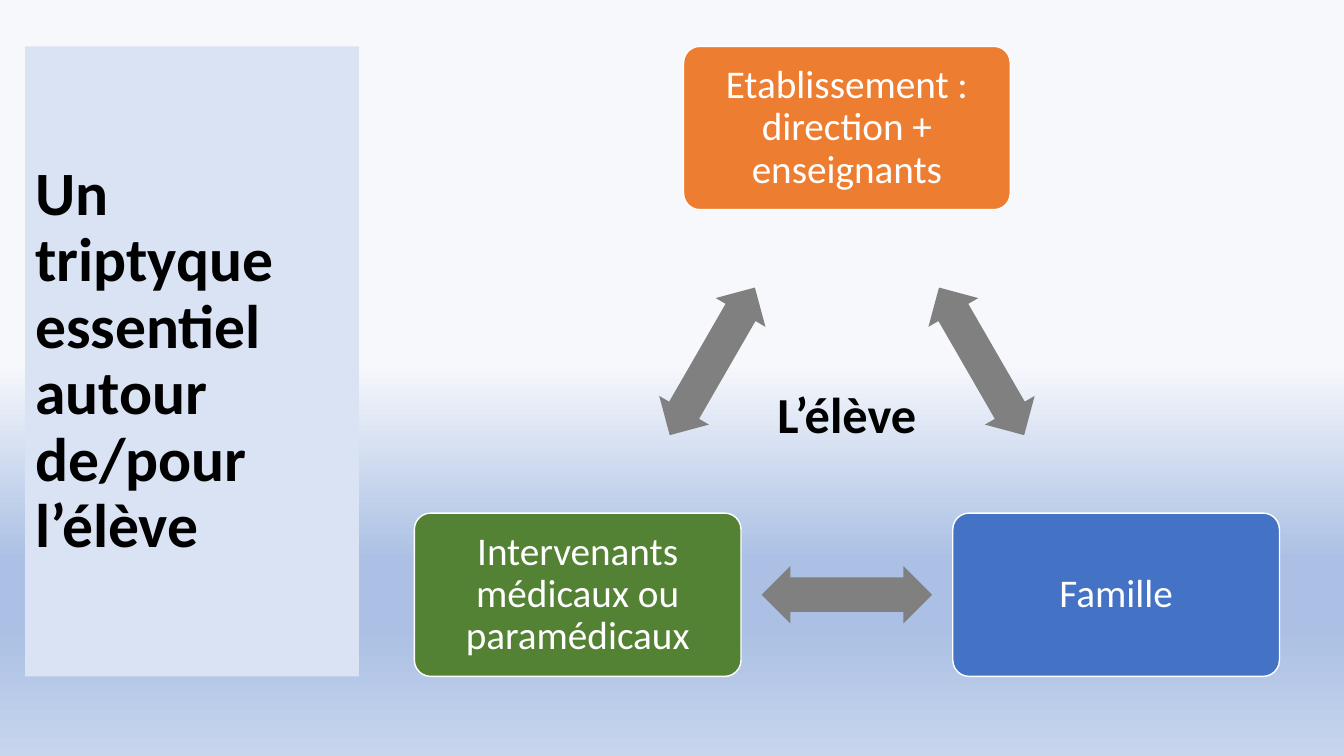
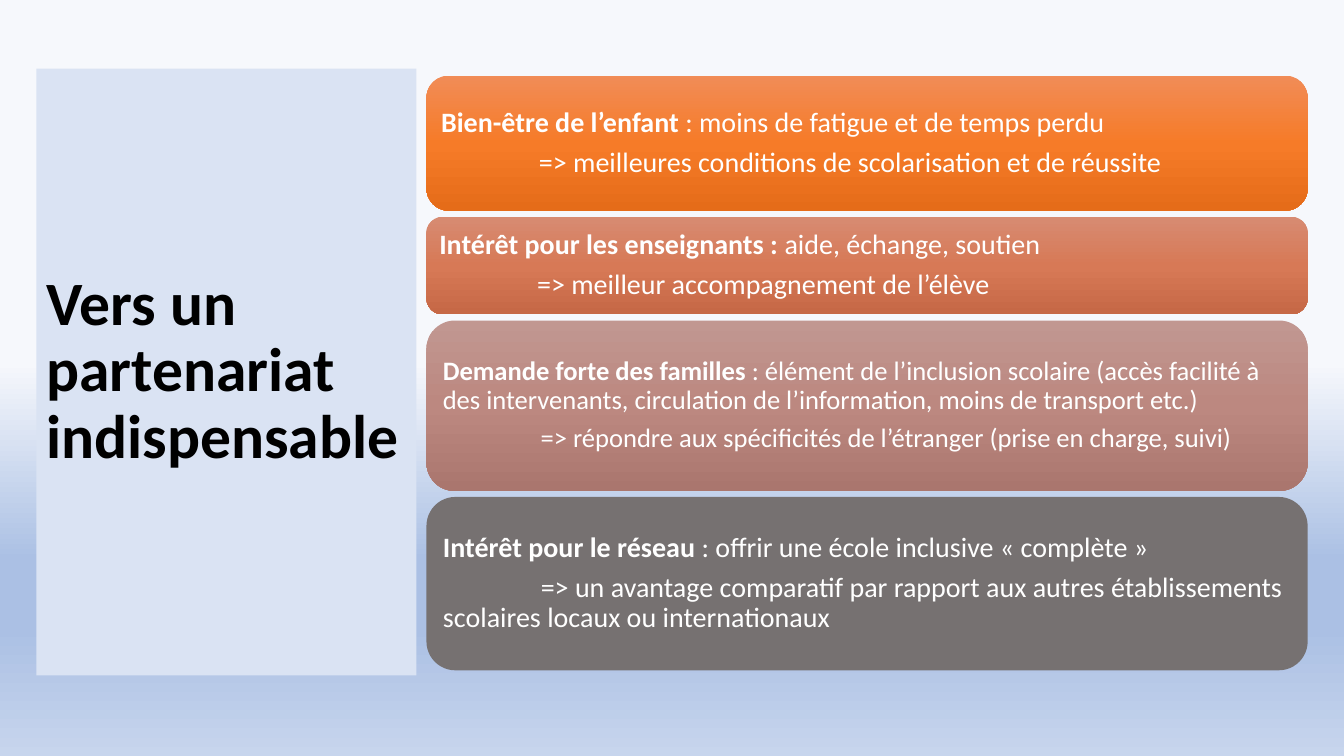
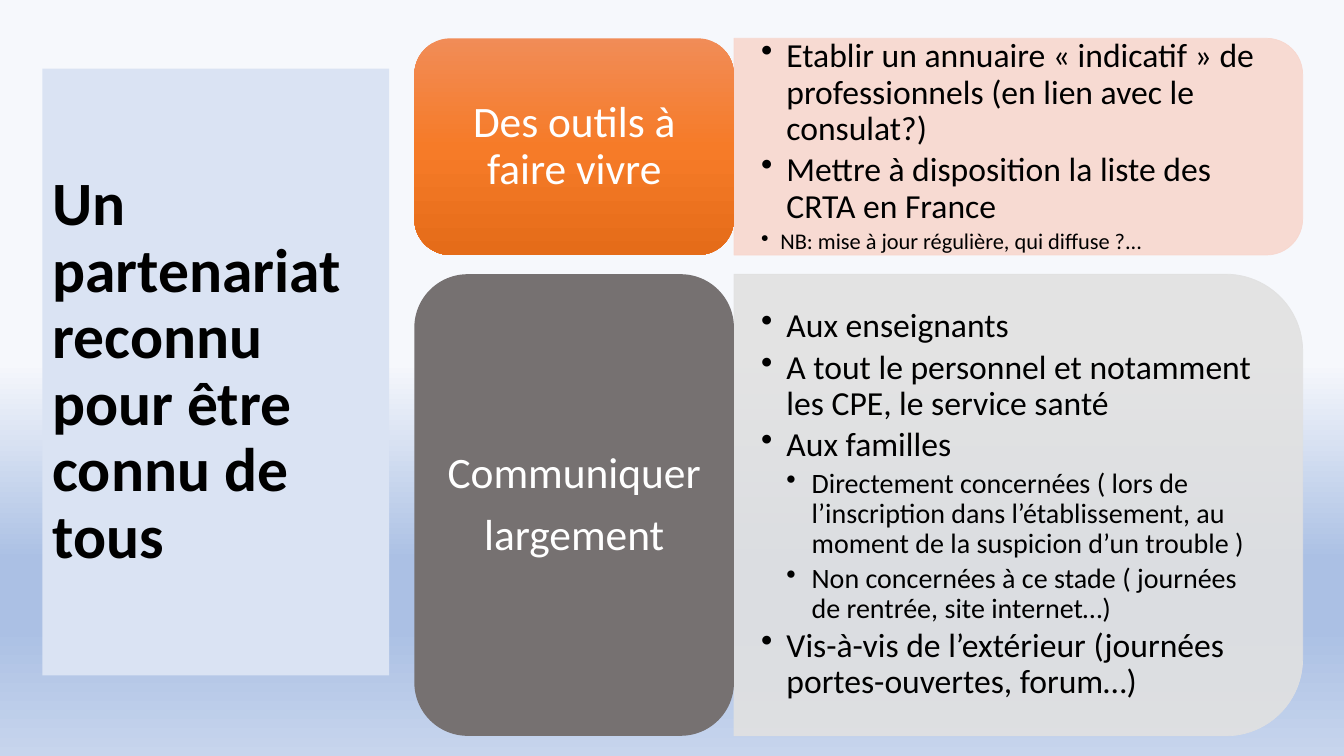
from itertools import combinations
from math import atan2, degrees, hypot

from lxml.etree import SubElement
from pptx import Presentation
from pptx.dml.color import RGBColor
from pptx.enum.shapes import MSO_SHAPE
from pptx.enum.text import MSO_ANCHOR, MSO_AUTO_SIZE, PP_ALIGN
from pptx.oxml.ns import qn
from pptx.util import Inches, Pt

FONT = "Calibri"
COLORS = {
    "black": "000000", "white": "FFFFFF", "panel": "DAE3F3",
    "orange": "ED7D31", "blue": "4472C4", "green": "548235",
    "arrow": "808080", "gray": "767171",
    "pale_orange": "F8D7CE", "pale_gray": "E1E1E1",
}
BACKGROUND = [(48, "F6F8FC"), (74, "ABC0E4"), (83, "ABC0E4"), (100, "C7D5ED")]
ORANGE_FADE = [(0, "F18C57"), (50, "F67B28"), (100, "E56C19")]
BRICK_FADE = [(0, "D78B72"), (50, "D77956"), (100, "C66846")]
ROSE_FADE = [(0, "C19791"), (50, "BC8880"), (100, "AA766E")]
CORNER = 0.1667       # default corner radius, as a share of the short side
CORNER_INSET = 0.29   # share of the radius that text keeps clear of


def rgb(name):
    return RGBColor.from_string(COLORS[name])


def fade(fill, element, stops):
    """Fill from top to bottom with (percent, hex) stops."""
    fill.gradient()
    fill.gradient_angle = 270
    stop_list = next(element.iter(qn("a:gsLst")))
    for old in list(stop_list):
        stop_list.remove(old)
    for percent, color in stops:
        stop = SubElement(stop_list, qn("a:gs"), pos=str(percent * 1000))
        SubElement(stop, qn("a:srgbClr"), val=color)


def add_box(s, kind, left, top, width, height, fill, line=None, line_width=1):
    """Add a preset shape; fill is a colour name or a list of stops."""
    sp = s.shapes.add_shape(kind, Inches(left), Inches(top),
                            Inches(width), Inches(height))
    sp.shadow.inherit = False
    if isinstance(fill, str):
        sp.fill.solid()
        sp.fill.fore_color.rgb = rgb(fill)
    else:
        fade(sp.fill, sp._element.spPr, fill)
    if line:
        sp.line.color.rgb = rgb(line)
        sp.line.width = Pt(line_width)
    else:
        sp.line.fill.background()
    return sp


def set_frame(tf, margin_x, margin_y):
    tf.word_wrap = True
    tf.auto_size = MSO_AUTO_SIZE.NONE
    tf.vertical_anchor = MSO_ANCHOR.MIDDLE
    tf.margin_left = tf.margin_right = Inches(margin_x)
    tf.margin_top = tf.margin_bottom = Inches(margin_y)


def style(p, size, color, align=PP_ALIGN.LEFT, after=0.0, bold=False):
    """Format a paragraph; after is a share of the text size."""
    p.alignment = align
    p.line_spacing = 0.9
    p.space_after = Pt(size * after)
    for r in p.runs:
        r.font.name = FONT
        r.font.size = Pt(size)
        r.font.color.rgb = rgb(color)
        r.font.bold = bold


def indent(p, left, first):
    pPr = p._p.get_or_add_pPr()
    pPr.set("marL", str(Inches(left)))
    pPr.set("indent", str(Inches(first)))
    return pPr


def write_centered(sp, text, size, margin_x, margin_y):
    tf = sp.text_frame
    set_frame(tf, margin_x, margin_y)
    tf.text = text
    for p in tf.paragraphs:
        style(p, size, "white", PP_ALIGN.CENTER, 0.35)


def add_titled_slide(prs, title, left, top, width, height):
    s = prs.slides.add_slide(prs.slide_layouts[5])
    sp = s.shapes.title
    sp.left, sp.top = Inches(left), Inches(top)
    sp.width, sp.height = Inches(width), Inches(height)
    sp.fill.solid()
    sp.fill.fore_color.rgb = rgb("panel")
    set_frame(sp.text_frame, 0.1, 0.05)
    sp.text_frame.text = title
    style(sp.text_frame.paragraphs[0], 44, "black", bold=True)
    return s


def add_triangle(s, left, top, width, height, partners, center_text):
    """Three partners at the corners of a triangle, joined by arrows."""
    box_w, box_h, arrow_w, arrow_h = 3.24, 1.62, 1.69, 0.57
    x_mid, y_low = left + width / 2, top + height - box_h / 2
    centers = [(x_mid, top + box_h / 2), (left + width - box_w / 2, y_low),
               (left + box_w / 2, y_low)]
    for (x, y), (text, color) in zip(centers, partners):
        sp = add_box(s, MSO_SHAPE.ROUNDED_RECTANGLE, x - box_w / 2,
                     y - box_h / 2, box_w, box_h, color, "white")
        sp.adjustments[0] = 0.1
        write_centered(sp, text, 28, 0.12, 0.12)
    for (x1, y1), (x2, y2) in combinations(centers, 2):
        sp = add_box(s, MSO_SHAPE.LEFT_RIGHT_ARROW, (x1 + x2 - arrow_w) / 2,
                     (y1 + y2 - arrow_h) / 2, arrow_w, arrow_h, "arrow")
        sp.adjustments[0], sp.adjustments[1] = 0.6, 0.5
        sp.rotation = degrees(atan2(y2 - y1, x2 - x1))

    label_w, label_h = 1.95, 0.71
    label = s.shapes.add_textbox(Inches(x_mid - label_w / 2), Inches(top + 3.29),
                                 Inches(label_w), Inches(label_h))
    set_frame(label.text_frame, 0.1, 0.05)
    p = label.text_frame.paragraphs[0]
    p.text = center_text
    style(p, 36, "black", PP_ALIGN.CENTER, bold=True)
    p.line_spacing = 1.0


def add_benefits(s, left, top, width, benefits):
    """Stacked bands: a bold lead with its detail, then the outcome."""
    for height, fill, size, lead, detail, outcome in benefits:
        sp = add_box(s, MSO_SHAPE.ROUNDED_RECTANGLE, left, top, width, height, fill)
        tf = sp.text_frame
        set_frame(tf, 0.08, 0.08)
        tf.text = lead
        p = tf.paragraphs[0]
        p.add_run().text = detail
        style(p, size, "white", after=0.35)
        p.runs[0].font.bold = True
        p = tf.add_paragraph()
        p.text = outcome
        style(p, size, "white", after=0.35)
        indent(p, 0, 0.97)
        top += height + 0.06


def add_bullet_card(s, left, top, width, height, color, bullets):
    """A card rounded on its right side, holding (text, size, left, hang)."""
    sp = add_box(s, MSO_SHAPE.ROUND_2_SAME_RECTANGLE,
                 left + (width - height) / 2, top + (height - width) / 2,
                 height, width, color, color, 0.5)
    sp.rotation = 90
    for clr in sp._element.spPr.iter(qn("a:srgbClr")):
        SubElement(clr, qn("a:alpha"), val="90000")

    inset = CORNER_INSET * CORNER * height
    tb = s.shapes.add_textbox(Inches(left), Inches(top + inset),
                              Inches(width - inset), Inches(height - 2 * inset))
    tf = tb.text_frame
    set_frame(tf, 0.27, 0.14)
    tf.text = "\n".join(text for text, *_ in bullets)
    for p, (_, size, margin, hang) in zip(tf.paragraphs, bullets):
        style(p, size, "black", after=0.15)
        SubElement(indent(p, margin, -hang), qn("a:buChar"), char="•")


def add_action(s, left, top, height, label, fill, card_color, bullets):
    label_w, card_w = 3.17, 5.64
    add_bullet_card(s, left + label_w, top, card_w, height, card_color, bullets)
    sp = add_box(s, MSO_SHAPE.ROUNDED_RECTANGLE, left, top, label_w, height, fill)
    write_centered(sp, label, 31, 0.13, 0.06)


def build_triptych(prs):
    s = add_titled_slide(prs, "Un triptyque essentiel autour de/pour l’élève",
                         0.25, 0.46, 3.31, 6.25)
    add_triangle(s, 4.11, 0.46, 8.58, 6.25, [
        ("Etablissement : direction + enseignants", "orange"),
        ("Famille", "blue"),
        ("Intervenants médicaux ou paramédicaux", "green"),
    ], "L’élève")


def build_partnership(prs):
    s = add_titled_slide(prs, "Vers un partenariat indispensable",
                         0.36, 0.68, 3.77, 6.02)
    add_benefits(s, 4.23, 0.75, 8.74, [
        (1.34, ORANGE_FADE, 20, "Bien-être de l’enfant ",
         ": moins de fatigue et de temps perdu",
         "=> meilleures conditions de scolarisation et de réussite"),
        (0.97, BRICK_FADE, 20, "Intérêt pour les enseignants :",
         " aide, échange, soutien",
         "=> meilleur accompagnement de l’élève"),
        (1.69, ROSE_FADE, 19, "Demande forte des familles ",
         ": élément de l’inclusion scolaire (accès facilité à des intervenants, "
         "circulation de l’information, moins de transport etc.)",
         "=> répondre aux spécificités de l’étranger (prise en charge, suivi)"),
        (1.72, "gray", 20, "Intérêt pour le réseau ",
         ": offrir une école inclusive « complète »",
         "=> un avantage comparatif par rapport aux autres établissements "
         "scolaires locaux ou internationaux"),
    ])


def build_actions(prs):
    s = add_titled_slide(prs, "Un partenariat reconnu pour être connu de tous",
                         0.42, 0.68, 3.44, 6.02)
    main, sub, note = (24, 0.25, 0.25), (20, 0.5, 0.25), (16, 0.19, 0.19)
    add_action(s, 4.11, 0.38, 2.15, "Des outils à faire vivre",
               ORANGE_FADE, "pale_orange", [
        ("Etablir un annuaire « indicatif » de professionnels "
         "(en lien avec le consulat?)", *main),
        ("Mettre à disposition la liste des CRTA en France", *main),
        ("NB: mise à jour régulière, qui diffuse ?...", *note),
    ])
    add_action(s, 4.11, 2.72, 4.58, "Communiquer\nlargement",
               "gray", "pale_gray", [
        ("Aux enseignants", *main),
        ("A tout le personnel et notamment les CPE, le service santé", *main),
        ("Aux familles", *main),
        ("Directement concernées ( lors de l’inscription dans l’établissement, "
         "au moment de la suspicion d’un trouble )", *sub),
        ("Non concernées à ce stade ( journées de rentrée, site internet…)", *sub),
        ("Vis-à-vis de l’extérieur (journées portes-ouvertes, forum…)", *main),
    ])


def main():
    prs = Presentation()
    prs.slide_width, prs.slide_height = Inches(13.33), Inches(7.5)
    master = prs.slide_master
    fade(master.background.fill, master._element, BACKGROUND)
    build_triptych(prs)
    build_partnership(prs)
    build_actions(prs)
    prs.save("out.pptx")


if __name__ == "__main__":
    main()
